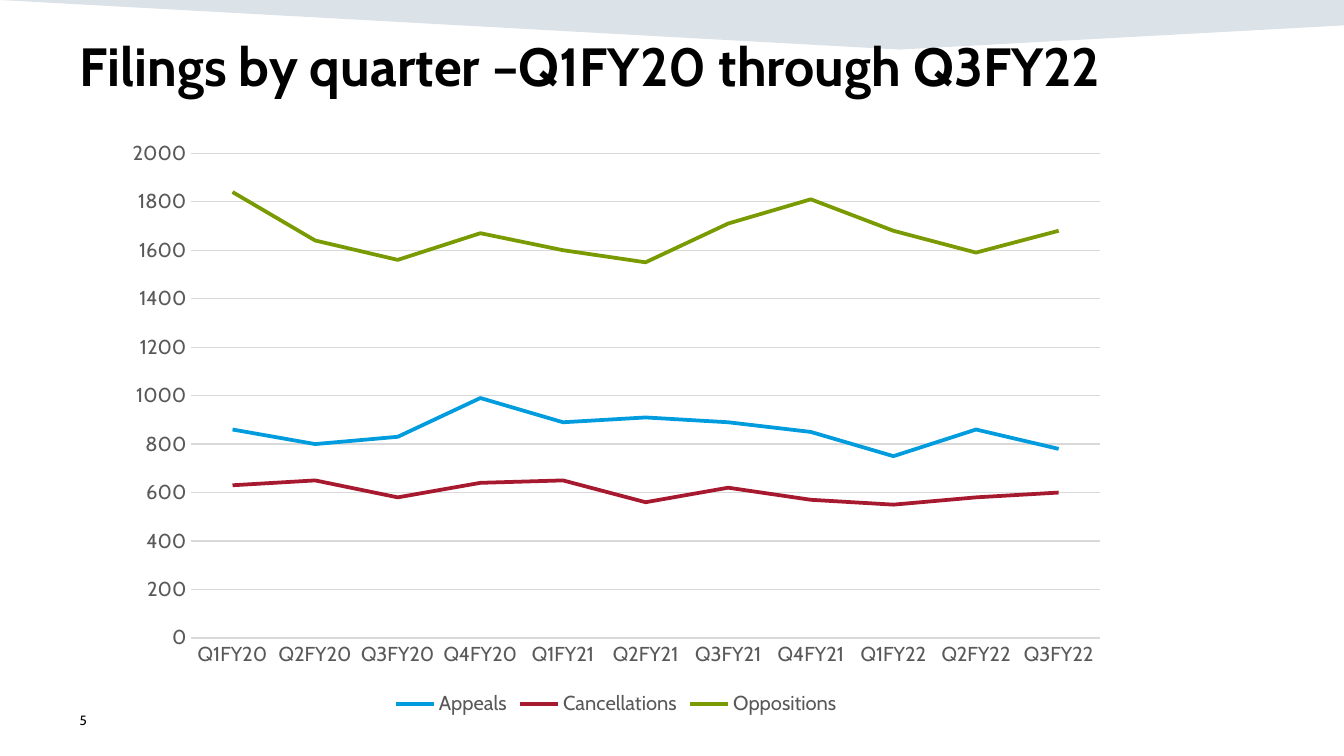
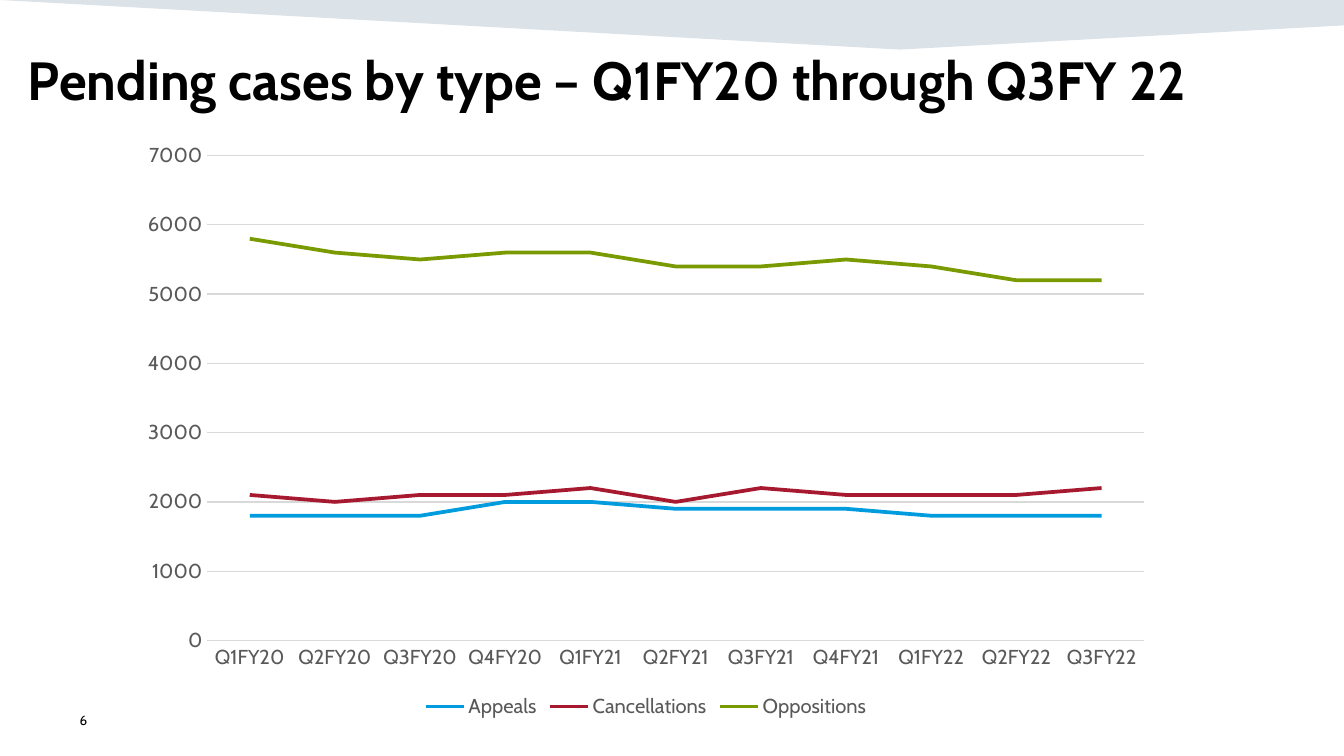
from lxml import etree
from pptx import Presentation
from pptx.chart.data import CategoryChartData
from pptx.dml.color import RGBColor
from pptx.enum.chart import XL_CHART_TYPE, XL_LEGEND_POSITION, XL_TICK_MARK
from pptx.enum.text import MSO_ANCHOR
from pptx.oxml.ns import qn
from pptx.util import Inches, Pt

FONT = "Cabin"
BLACK, GREY, GRID, NAVY = "000000", "595959", "D9D9D9", "164469"
BAND_OUTLINE = [(0, 0), (11.11, 0), (11.11, 0.21), (7.44, 0.41)]
BAND_OPACITY = 15
NUMBER_BOX = (0.56, 5.79, 2.5, 0.33)

QUARTERS = [f"Q{quarter}FY{year}" for year in (20, 21, 22) for quarter in (1, 2, 3, 4)][:11]
CASE_COLORS = {"Appeals": "009CDE", "Cancellations": "A6192E", "Oppositions": "7A9A01"}

SLIDES = [
    {
        "number": "5",
        "title": "Filings by quarter –Q1FY20 through Q3FY22",
        "title_box": (0.56, 0.22, 10, 0.95),
        "chart_box": (0.93, 1.07, 8.33, 4.89),
        "axis_max": 2000,
        "axis_step": 200,
        "cases": {
            "Appeals": [860, 800, 830, 990, 890, 910, 890, 850, 750, 860, 780],
            "Cancellations": [630, 650, 580, 640, 650, 560, 620, 570, 550, 580, 600],
            "Oppositions": [1840, 1640, 1560, 1670, 1600, 1550, 1710, 1810, 1680, 1590, 1680],
        },
    },
    {
        "number": "6",
        "title": "Pending cases by type – Q1FY20 through Q3FY 22",
        "title_box": (0.13, 0.34, 10.67, 0.95),
        "chart_box": (1.05, 1.09, 8.58, 4.89),
        "axis_max": 7000,
        "axis_step": 1000,
        "cases": {
            "Appeals": [1800, 1800, 1800, 2000, 2000, 1900, 1900, 1900, 1800, 1800, 1800],
            "Cancellations": [2100, 2000, 2100, 2100, 2200, 2000, 2200, 2100, 2100, 2100, 2200],
            "Oppositions": [5800, 5600, 5500, 5600, 5600, 5400, 5400, 5500, 5400, 5200, 5200],
        },
    },
]


def rgb(color):
    return RGBColor.from_string(color)


def inches(box):
    return [Inches(length) for length in box]


def style_font(font, size, color, bold=False):
    font.name = FONT
    font.size = Pt(size)
    font.bold = bold
    font.color.rgb = rgb(color)


def style_line(line, color, width):
    line.color.rgb = rgb(color)
    line.width = Pt(width)


def add_band(slide):
    start, *corners = [tuple(inches(point)) for point in BAND_OUTLINE]
    builder = slide.shapes.build_freeform(*start)
    builder.add_line_segments(corners, close=True)
    band = builder.convert_to_shape()
    band.shadow.inherit = False
    band.line.fill.background()
    band.fill.solid()
    band.fill.fore_color.rgb = rgb(NAVY)
    fill_color = band.fill._xPr.find(qn("a:solidFill"))[0]
    etree.SubElement(fill_color, qn("a:alpha")).set("val", str(BAND_OPACITY * 1000))


def add_text(slide, box, text, size, bold=False, anchor=MSO_ANCHOR.TOP):
    frame = slide.shapes.add_textbox(*inches(box)).text_frame
    frame.word_wrap = True
    frame.vertical_anchor = anchor
    paragraph = frame.paragraphs[0]
    paragraph.text = text
    style_font(paragraph.font, size, BLACK, bold)


def add_case_chart(slide, content):
    data = CategoryChartData()
    data.categories = QUARTERS
    for case, counts in content["cases"].items():
        data.add_series(case, counts)
    chart = slide.shapes.add_chart(
        XL_CHART_TYPE.LINE, *inches(content["chart_box"]), data
    ).chart
    style_font(chart.font, 10, BLACK)
    chart.has_title = False
    chart.has_legend = True
    chart.legend.position = XL_LEGEND_POSITION.BOTTOM
    chart.legend.include_in_layout = False
    style_font(chart.legend.font, 12, GREY)

    quarter_axis, count_axis = chart.category_axis, chart.value_axis
    for axis in (quarter_axis, count_axis):
        axis.major_tick_mark = axis.minor_tick_mark = XL_TICK_MARK.NONE
        style_font(axis.tick_labels.font, 12, GREY)
    style_line(quarter_axis.format.line, GRID, 0.75)
    count_axis.format.line.fill.background()
    count_axis.has_major_gridlines = True
    style_line(count_axis.major_gridlines.format.line, GRID, 0.75)
    count_axis.minimum_scale = 0
    count_axis.maximum_scale = content["axis_max"]
    count_axis.major_unit = content["axis_step"]

    plot = chart.plots[0]
    plot.vary_by_categories = False
    for series in plot.series:
        series.smooth = False
        style_line(series.format.line, CASE_COLORS[series.name], 2.25)


def main():
    deck = Presentation()
    deck.slide_width, deck.slide_height = Inches(11.11), Inches(6.25)
    for content in SLIDES:
        slide = deck.slides.add_slide(deck.slide_layouts[6])
        add_band(slide)
        add_text(slide, content["title_box"], content["title"], 32, bold=True)
        add_case_chart(slide, content)
        add_text(slide, NUMBER_BOX, content["number"], 8, anchor=MSO_ANCHOR.MIDDLE)
    deck.save("out.pptx")


if __name__ == "__main__":
    main()
